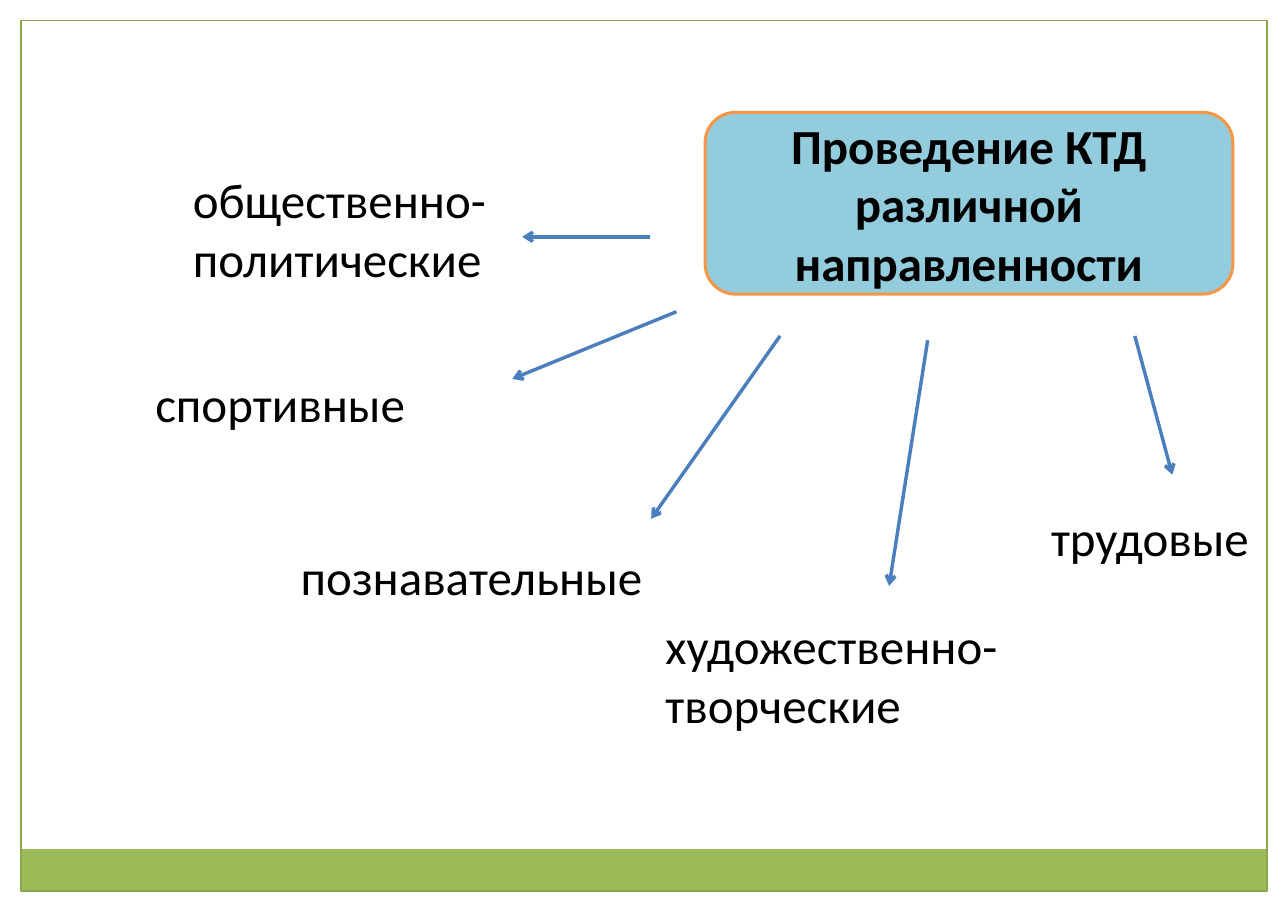
from pptx import Presentation
from pptx.dml.color import RGBColor
from pptx.enum.shapes import MSO_CONNECTOR, MSO_SHAPE
from pptx.enum.text import MSO_ANCHOR, MSO_AUTO_SIZE, PP_ALIGN
from pptx.oxml.ns import qn
from pptx.util import Inches, Pt
from lxml.etree import SubElement

COLORS = {
    "band": "9BBB59",
    "frame": "89A54F",
    "title_fill": "93CDDD",
    "title_line": "F79646",
    "arrow": "4B7EBC",
    "text": "000000",
}
FONT_NAME = "Calibri"
FONT_SIZE = 32
SLIDE_WIDTH, SLIDE_HEIGHT = 11.69, 8.28
MARGIN = 0.19
BAND_TOP, BAND_HEIGHT = 7.71, 0.37

TITLE = "Проведение КТД различной направленности"
TITLE_BOX = (6.4, 1.02, 4.79, 1.65)
DIRECTIONS = [
    ("трудовые", (9.43, 4.55, 2.23, 0.65), (10.3, 3.05, 10.64, 4.31)),
    ("познавательные", (2.62, 4.9, 3.86, 0.65), (7.08, 3.05, 5.91, 4.71)),
    ("спортивные", (1.3, 3.33, 3.04, 0.65), (6.14, 2.83, 4.65, 3.44)),
    ("художественно- творческие", (5.93, 5.53, 3.59, 1.19), (8.42, 3.09, 8.07, 5.32)),
    ("общественно-политические", (1.64, 1.48, 3.58, 1.19), (5.9, 2.15, 4.74, 2.15)),
]


def color(name):
    return RGBColor.from_string(COLORS[name])


def inches(values):
    return [Inches(value) for value in values]


def add_box(slide, preset, box, fill=None, line=None, width=0):
    shape = slide.shapes.add_shape(preset, *inches(box))
    shape.shadow.inherit = False
    if fill:
        shape.fill.solid()
        shape.fill.fore_color.rgb = color(fill)
    else:
        shape.fill.background()
    if line:
        shape.line.color.rgb = color(line)
        shape.line.width = Pt(width)
    else:
        shape.line.fill.background()
    return shape


def write(shape, text, bold=False, alignment=PP_ALIGN.LEFT):
    frame = shape.text_frame
    frame.word_wrap = True
    frame.margin_left = frame.margin_right = Inches(0.11)
    frame.margin_top = frame.margin_bottom = Inches(0.06)
    frame.text = text
    paragraph = frame.paragraphs[0]
    paragraph.alignment = alignment
    font = paragraph.runs[0].font
    font.name = FONT_NAME
    font.size = Pt(FONT_SIZE)
    font.bold = bold
    font.color.rgb = color("text")


def add_arrow(slide, ends):
    connector = slide.shapes.add_connector(MSO_CONNECTOR.STRAIGHT, *inches(ends))
    connector.line.color.rgb = color("arrow")
    connector.line.width = Pt(2.25)
    SubElement(connector.line._get_or_add_ln(), qn("a:tailEnd"), type="arrow")
    SubElement(connector._element.spPr, qn("a:effectLst"))


def add_label(slide, text, box):
    label = slide.shapes.add_textbox(*inches(box))
    write(label, text)
    label.text_frame.auto_size = MSO_AUTO_SIZE.SHAPE_TO_FIT_TEXT


def main():
    presentation = Presentation()
    presentation.slide_width = Inches(SLIDE_WIDTH)
    presentation.slide_height = Inches(SLIDE_HEIGHT)
    slide = presentation.slides.add_slide(presentation.slide_layouts[6])

    inner_width = SLIDE_WIDTH - 2 * MARGIN
    inner_height = SLIDE_HEIGHT - 2 * MARGIN
    add_box(slide, MSO_SHAPE.RECTANGLE,
            (MARGIN, BAND_TOP, inner_width, BAND_HEIGHT), fill="band")
    add_box(slide, MSO_SHAPE.RECTANGLE,
            (MARGIN, MARGIN, inner_width, inner_height), line="frame", width=0.75)

    title = add_box(slide, MSO_SHAPE.FLOWCHART_ALTERNATE_PROCESS, TITLE_BOX,
                    fill="title_fill", line="title_line", width=2)
    write(title, TITLE, bold=True, alignment=PP_ALIGN.CENTER)
    title.text_frame.vertical_anchor = MSO_ANCHOR.MIDDLE

    for text, box, ends in DIRECTIONS:
        add_arrow(slide, ends)
        add_label(slide, text, box)

    presentation.save("out.pptx")


if __name__ == "__main__":
    main()
